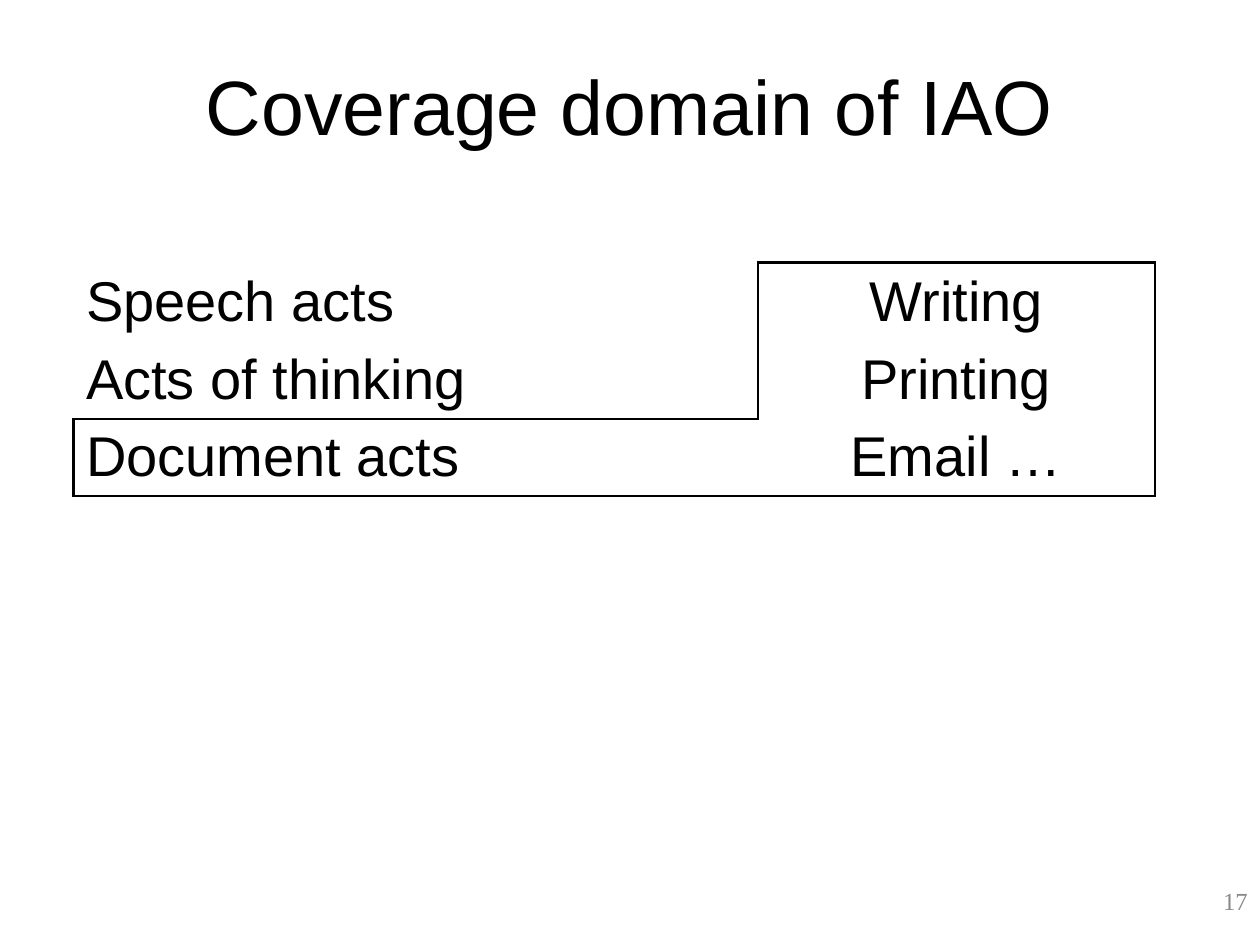
from pptx import Presentation
from pptx.dml.color import RGBColor as RGB
from pptx.enum.text import MSO_ANCHOR as Anchor, PP_ALIGN as Align
from pptx.oxml.xmlchemy import OxmlElement as Elem
from pptx.util import Cm, Pt

BLACK, GREY = "000000", "898989"
COLS = [10.6, 3.2, 8]
ROWS = [1.6, 1.53, 1.5]
ACTS = [
    ("Speech acts", "", "Writing"),
    ("Acts of thinking", "", "Printing"),
    ("Document acts", "", "Email …"),
]
# Cells (row, column) that the outline encloses
DOMAIN = {(0, 2), (1, 2), (2, 0), (2, 1), (2, 2)}
# Sides in the order the schema asks for, with the step to the neighbour
SIDES = [("L", 0, -1), ("R", 0, 1), ("T", -1, 0), ("B", 1, 0)]


def color(code):
    return RGB.from_string(code)


def style(frame, size, font, code, align):
    for par in frame.paragraphs:
        par.alignment = align
        for run in par.runs:
            run.font.size = Pt(size)
            run.font.name = font
            run.font.color.rgb = color(code)


def add_text(slide, box, text, size, font, code, align, anchor):
    frame = slide.shapes.add_textbox(*map(Cm, box)).text_frame
    frame.word_wrap = True
    frame.vertical_anchor = anchor
    frame.text = text
    style(frame, size, font, code, align)


def add_edge(cell, pos, side, drawn):
    """Insert one border line; hidden sides get an empty line."""
    line = Elem("a:ln" + side)
    if drawn:
        line.set("w", str(Pt(1.5)))
        fill = Elem("a:solidFill")
        tone = Elem("a:srgbClr")
        tone.set("val", BLACK)
        fill.append(tone)
    else:
        fill = Elem("a:noFill")
    line.append(fill)
    cell._tc.get_or_add_tcPr().insert(pos, line)


def add_table(slide, left, top):
    size = Cm(sum(COLS)), Cm(sum(ROWS))
    frame = slide.shapes.add_table(
        len(ROWS), len(COLS), Cm(left), Cm(top), *size)
    table = frame.table
    table.first_row = table.horz_banding = False
    for col, width in zip(table.columns, COLS):
        col.width = Cm(width)
    for row, height in zip(table.rows, ROWS):
        row.height = Cm(height)

    for r, words in enumerate(ACTS):
        for c, text in enumerate(words):
            cell = table.cell(r, c)
            cell.fill.background()
            cell.margin_top = cell.margin_bottom = Cm(0.1)
            cell.vertical_anchor = Anchor.MIDDLE
            cell.text = text
            align = Align.CENTER if c == 2 else Align.LEFT
            style(cell.text_frame, 32, "Arial", BLACK, align)
            # A line shows wherever the domain meets the outside
            for pos, (side, down, right) in enumerate(SIDES):
                near = (r + down, c + right)
                drawn = ((r, c) in DOMAIN) != (near in DOMAIN)
                add_edge(cell, pos, side, drawn)


def main():
    deck = Presentation()
    deck.slide_width, deck.slide_height = Cm(25.4), Cm(19.05)
    slide = deck.slides.add_slide(deck.slide_layouts[6])

    # Title
    add_text(slide, (0, 0, 25.4, 4.24), "Coverage domain of IAO",
             44, "Arial", BLACK, Align.CENTER, Anchor.MIDDLE)
    # Kinds of acts, with the covered domain outlined
    add_table(slide, 1.48, 5.29)
    # Slide number
    add_text(slide, (19.48, 17.73, 5.92, 1.32), "17",
             14, "Times New Roman", GREY, Align.RIGHT, Anchor.TOP)

    deck.save("out.pptx")


if __name__ == "__main__":
    main()
